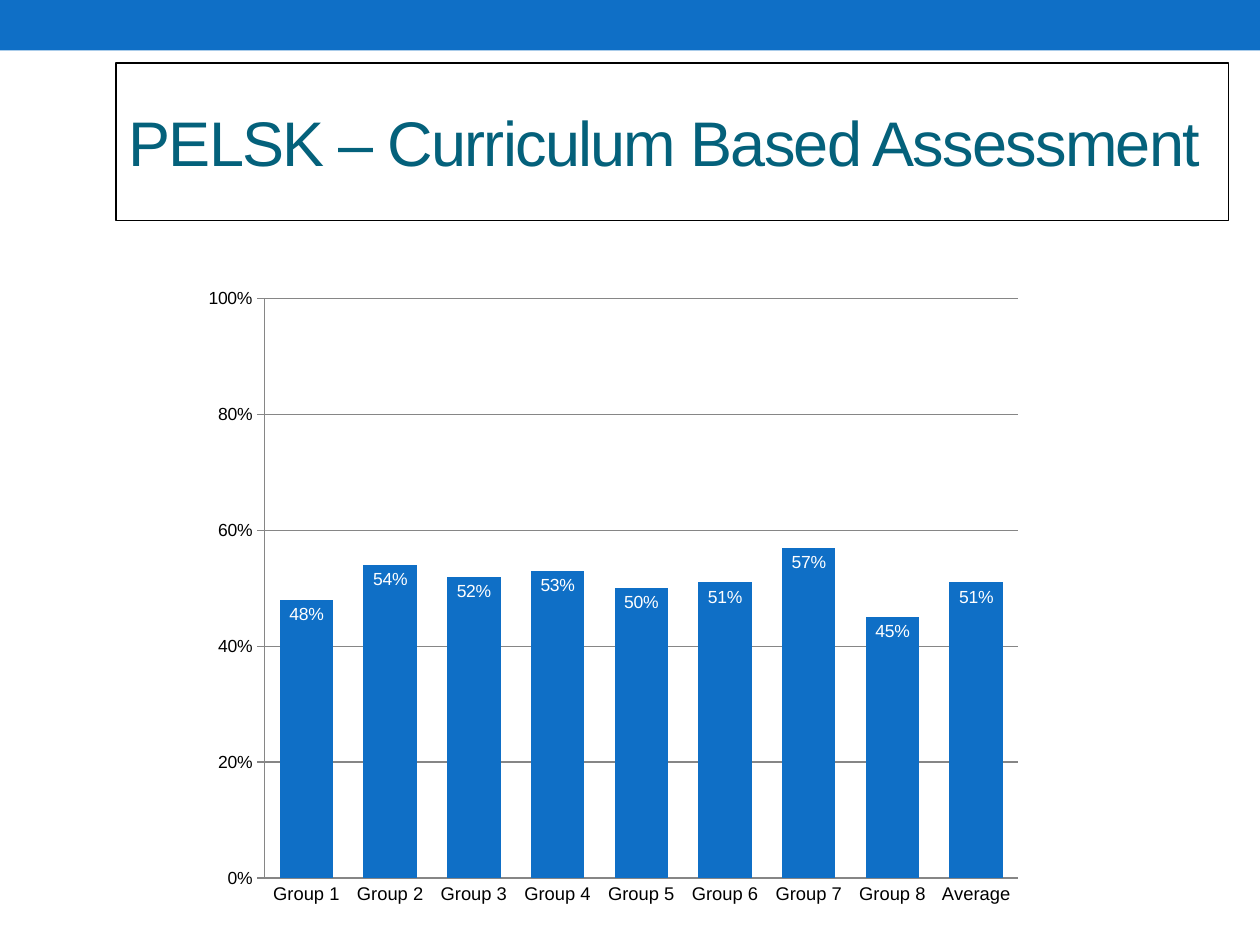
from typing import NamedTuple

from lxml.etree import SubElement
from pptx import Presentation
from pptx.chart.data import CategoryChartData
from pptx.dml.color import RGBColor
from pptx.enum.chart import XL_CHART_TYPE, XL_LABEL_POSITION, XL_TICK_MARK
from pptx.enum.shapes import MSO_SHAPE
from pptx.enum.text import MSO_ANCHOR, MSO_AUTO_SIZE, PP_ALIGN
from pptx.oxml import parse_xml
from pptx.oxml.ns import nsdecls, qn
from pptx.util import Inches, Pt

BLUE = RGBColor(0x0F, 0x6F, 0xC6)
TEAL = RGBColor(0x04, 0x61, 0x7B)
GRAY = RGBColor(0x86, 0x86, 0x86)
BLACK = RGBColor(0, 0, 0)
WHITE = RGBColor(0xFF, 0xFF, 0xFF)
FONT = "Arial"
WIDTH, HEIGHT = 6.68, 5.09  # chart frame, inches


class Score(NamedTuple):
    name: str
    share: float


SHARES = [0.48, 0.54, 0.52, 0.53, 0.5, 0.51, 0.57, 0.45]
SCORES = [Score(f"Group {n}", share) for n, share in enumerate(SHARES, 1)]
SCORES.append(Score("Average", 0.51))


def set_font(font, size: float, color: RGBColor) -> None:
    font.name = FONT
    font.size = Pt(size)
    font.color.rgb = color


def set_line(line, color: RGBColor) -> None:
    line.color.rgb = color
    line.width = Pt(0.75)


def add_band(slide) -> None:
    band = slide.shapes.add_shape(MSO_SHAPE.RECTANGLE, 0, 0, Inches(10), Inches(0.4))
    band.shadow.inherit = False
    band.fill.solid()
    band.fill.fore_color.rgb = BLUE
    band.line.fill.background()


def add_title(slide, text: str) -> None:
    title = slide.shapes.title
    title.left, title.top = Inches(0.92), Inches(0.5)
    title.width, title.height = Inches(8.83), Inches(1.25)
    set_line(title.line, BLACK)
    frame = title.text_frame
    frame.word_wrap = True
    frame.auto_size = MSO_AUTO_SIZE.NONE
    frame.vertical_anchor = MSO_ANCHOR.MIDDLE
    para = frame.paragraphs[0]
    para.alignment = PP_ALIGN.LEFT
    run = para.add_run()
    run.text = text
    set_font(run.font, 36, TEAL)
    run.font._element.set("spc", "-100")  # tighten by 1 pt


def fix_plot(chart, left: float, top: float, width: float, height: float) -> None:
    """Place the inner plot area, in inches within the chart frame."""
    area = chart._chartSpace.chart.plotArea
    for old in area.findall(qn("c:layout")):
        area.remove(old)
    layout = parse_xml(f"<c:layout {nsdecls('c')}><c:manualLayout/></c:layout>")
    values = {"layoutTarget": "inner", "xMode": "edge", "yMode": "edge",
              "x": left / WIDTH, "y": top / HEIGHT,
              "w": width / WIDTH, "h": height / HEIGHT}
    for tag, value in values.items():
        SubElement(layout[0], qn(f"c:{tag}")).set("val", str(value))
    area.insert(0, layout)


def add_scores(slide, scores: list[Score]) -> None:
    data = CategoryChartData(number_format="0%")
    data.categories = [score.name for score in scores]
    data.add_series("Series 1", [score.share for score in scores])
    chart = slide.shapes.add_chart(
        XL_CHART_TYPE.COLUMN_CLUSTERED, Inches(1.53), Inches(2.19),
        Inches(WIDTH), Inches(HEIGHT), data).chart
    chart.has_legend = False
    chart.has_title = False
    set_font(chart.font, 10, BLACK)
    fix_plot(chart, 0.57, 0.18, 5.98, 4.6)

    # Axes
    groups, shares = chart.category_axis, chart.value_axis
    groups.major_tick_mark = XL_TICK_MARK.NONE
    set_font(groups.tick_labels.font, 10.5, BLACK)
    shares.minimum_scale, shares.maximum_scale = 0, 1
    shares.major_unit = 0.2
    shares.major_tick_mark = XL_TICK_MARK.OUTSIDE
    shares.has_major_gridlines = True
    shares.tick_labels.number_format = "0%"
    shares.tick_labels.number_format_is_linked = False
    for part in (groups, shares, shares.major_gridlines):
        set_line(part.format.line, GRAY)

    # Columns and their labels
    plot = chart.plots[0]
    plot.gap_width = 57
    plot.vary_by_categories = False
    series = plot.series[0]
    series.format.fill.solid()
    series.format.fill.fore_color.rgb = BLUE
    labels = series.data_labels
    labels.show_value = True
    labels.position = XL_LABEL_POSITION.INSIDE_END
    labels.number_format = "0%"
    labels.number_format_is_linked = False
    set_font(labels.font, 10, WHITE)


def main() -> None:
    deck = Presentation()
    deck.slide_width, deck.slide_height = Inches(10), Inches(7.5)
    slide = deck.slides.add_slide(deck.slide_layouts[5])
    add_band(slide)
    add_title(slide, "PELSK – Curriculum Based Assessment")
    add_scores(slide, SCORES)
    deck.save("out.pptx")


if __name__ == "__main__":
    main()
